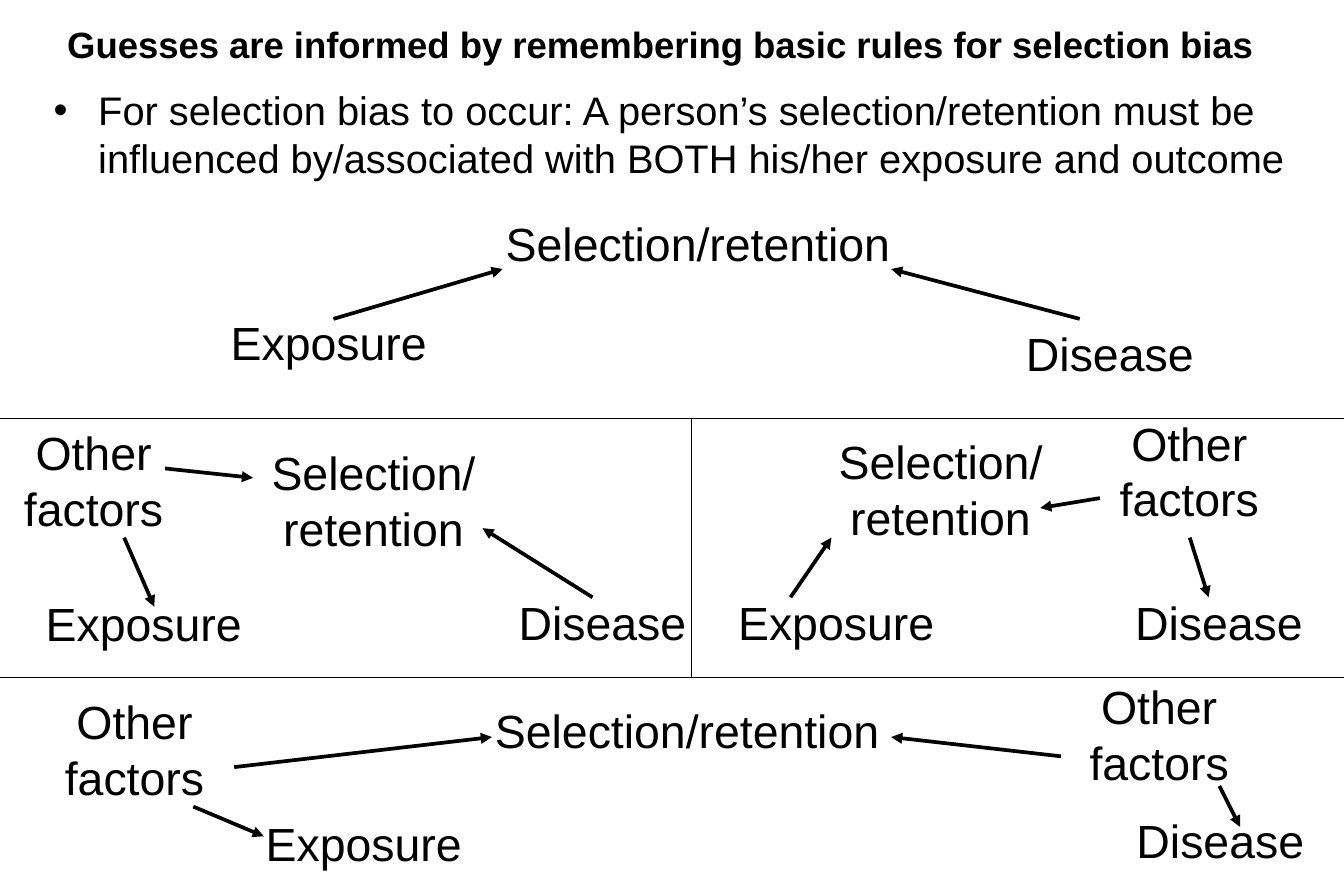
from lxml import etree
from pptx import Presentation
from pptx.dml.color import RGBColor
from pptx.enum.shapes import MSO_CONNECTOR
from pptx.enum.text import MSO_ANCHOR, MSO_AUTO_SIZE, PP_ALIGN
from pptx.oxml.ns import qn
from pptx.util import Cm, Pt

BLACK = RGBColor(0, 0, 0)
WHITE = RGBColor(255, 255, 255)
CENTER = PP_ALIGN.CENTER
LEFT = PP_ALIGN.LEFT
MIDDLE = MSO_ANCHOR.MIDDLE
TOP = MSO_ANCHOR.TOP
FIXED = MSO_AUTO_SIZE.NONE
LINE = MSO_CONNECTOR.STRAIGHT

WIDE, HIGH = 28.58, 19.05
RULE_A, RULE_B, SPLIT = 8.89, 14.4, 14.71
LONG, MID, SHORT = 9.96, 5.92, 4.24
ONE, TWO = 1.45, 2.62

HEAD = {"name": "Arial", "size": Pt(22), "bold": True}
BODY = {"name": "Arial", "size": Pt(24), "bold": False}
NODE = {"name": "Arial", "size": Pt(28), "bold": False}

PANELS = [
    ((0, 3.89),
     [("Selection/retention", 9.86, 0.56, LONG, ONE),
      ("Exposure", 2.01, 2.66, LONG, ONE),
      ("Disease", 18.62, 2.89, LONG, ONE)],
     [(7.09, 2.89, 10.69, 1.83), (22.96, 2.89, 18.95, 1.83)]),
    ((0, RULE_A),
     [("Selection/ retention", 4.98, 0.43, MID, TWO),
      ("Exposure", 0.3, 3.63, 5.51, ONE),
      ("Disease", 10.69, 3.61, SHORT, ONE),
      ("Other factors", -0.97, 0, MID, TWO)],
     [(2.64, 2.54, 3.28, 4.01), (3.51, 1.07, 5.38, 1.27),
      (12.6, 3.81, 10.26, 2.34)]),
    ((SPLIT, RULE_A),
     [("Selection/ retention", 2.33, 0.2, MID, TWO),
      ("Exposure", 0.43, 3.61, 5.28, ONE),
      ("Disease", 9.09, 3.61, SHORT, ONE),
      ("Other factors", 7.62, -0.2, MID, TWO)],
     [(2.1, 3.81, 2.97, 2.54), (10.59, 2.54, 10.99, 3.81),
      (8.68, 1.7, 7.41, 1.91)]),
    ((0, RULE_B),
     [("Selection/retention", 9.63, 0.41, LONG, ONE),
      ("Exposure", 4.98, 2.8, 5.51, ONE),
      ("Disease", 23.83, 2.75, SHORT, ONE),
      ("Other factors", -0.1, 0.21, MID, TWO),
      ("Other factors", 21.69, -0.1, MID, TWO)],
     [(4.98, 1.91, 10.46, 1.27), (22.56, 1.68, 18.95, 1.27),
      (4.11, 2.75, 5.61, 3.38), (25.93, 2.31, 26.37, 3.18)]),
]


def write(shape, text, style, align=CENTER, anchor=TOP):
    frame = shape.text_frame
    frame.word_wrap = True
    frame.auto_size = FIXED
    frame.vertical_anchor = anchor
    para = frame.paragraphs[0]
    para.alignment = align
    run = para.add_run()
    run.text = text
    for key, value in style.items():
        setattr(run.font, key, value)
    run.font.color.rgb = BLACK
    return para


def draw_line(shapes, ends, width, arrow=False):
    line = shapes.add_connector(LINE, *map(Cm, ends))
    line.line.color.rgb = BLACK
    line.line.width = Pt(width)
    props = line._element.spPr
    if arrow:
        tip = etree.SubElement(props.find(qn("a:ln")), qn("a:tailEnd"))
        tip.set("type", "triangle")
    etree.SubElement(props, qn("a:effectLst"))


def add_title(slide, box):
    title = slide.shapes.title
    for key, value in zip(("left", "top", "width", "height"), box):
        setattr(title, key, Cm(value))
    write(title, "Guesses are informed by remembering basic rules for selection bias",
          HEAD, CENTER, MIDDLE)


def add_body(slide, box):
    body = slide.shapes.add_textbox(*map(Cm, box))
    para = write(body, "For selection bias to occur: A person’s selection/retention must be "
                 "influenced by/associated with BOTH his/her exposure and outcome", BODY, LEFT)
    props = para._p.get_or_add_pPr()
    props.set("marL", str(Cm(0.95)))
    props.set("indent", str(-Cm(0.95)))
    etree.SubElement(props, qn("a:buFont")).set("typeface", "Arial")
    etree.SubElement(props, qn("a:buChar")).set("char", "•")


def add_panel(slide, box, nodes, arrows):
    left, top = box
    shapes = slide.shapes.add_group_shape().shapes
    for x, y, end_x, end_y in arrows:
        draw_line(shapes, (left + x, top + y, left + end_x, top + end_y), 2.25, True)
    for text, x, y, width, height in nodes:
        node = shapes.add_textbox(Cm(left + x), Cm(top + y), Cm(width), Cm(height))
        write(node, text, NODE)


def add_rules(slide, box):
    left, top, right, low = box
    shapes = slide.shapes.add_group_shape().shapes
    for y in (top, low):
        draw_line(shapes, (left, y, right, y), 0.75)
    draw_line(shapes, (left + SPLIT, top, left + SPLIT, low), 0.75)


def main():
    deck = Presentation()
    deck.slide_width, deck.slide_height = Cm(WIDE), Cm(HIGH)
    slide = deck.slides.add_slide(deck.slide_layouts[5])
    fill = slide.background.fill
    fill.solid()
    fill.fore_color.rgb = WHITE
    add_title(slide, (1.09, 0.2, 25.91, 1.47))
    add_body(slide, (0.89, 1.7, 26.72, 2.5))
    for panel in PANELS:
        add_panel(slide, *panel)
    add_rules(slide, (0, RULE_A, WIDE, RULE_B))
    deck.save("out.pptx")


if __name__ == "__main__":
    main()
